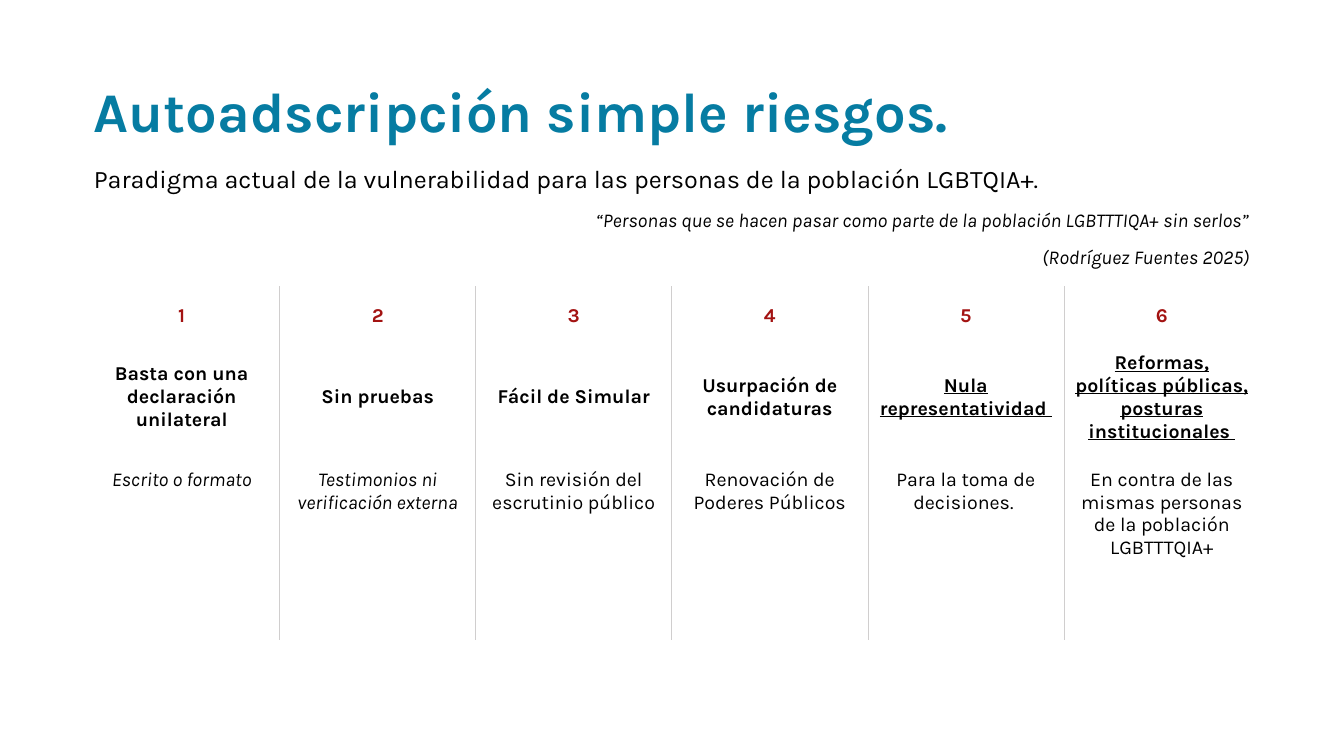
from lxml import etree
from pptx import Presentation
from pptx.dml.color import RGBColor
from pptx.enum.text import MSO_ANCHOR, MSO_AUTO_SIZE, PP_ALIGN
from pptx.oxml.ns import qn
from pptx.util import Cm, Pt

LEFT, CENTER, RIGHT = PP_ALIGN.LEFT, PP_ALIGN.CENTER, PP_ALIGN.RIGHT
TOP, MIDDLE = MSO_ANCHOR.TOP, MSO_ANCHOR.MIDDLE
NO_AUTOFIT = MSO_AUTO_SIZE.NONE

# Content
FONT = "Karla"
BLUE, RED, BLACK, GRAY = "067CA2", "A31312", "000000", "D0CECE"
TITLE = "Autoadscripción simple riesgos."
SUBTITLE = "Paradigma actual de la vulnerabilidad para las personas de la población LGBTQIA+."
QUOTE = [
    "“Personas que se hacen pasar como parte de la población LGBTTTIQA+ sin serlos”",
    "(Rodríguez Fuentes 2025)",
]
# Heading, heading underlined, detail, detail in italics
RISKS = [
    ("Basta con una declaración unilateral", False, "Escrito o formato", True),
    ("Sin pruebas", False, "Testimonios ni verificación externa", True),
    ("Fácil de Simular", False, "Sin revisión del escrutinio público", False),
    ("Usurpación de candidaturas", False, "Renovación de Poderes Públicos", False),
    ("Nula representatividad ", True, "Para la toma de decisiones. ", False),
    ("Reformas, políticas públicas, posturas institucionales ", True,
     "En contra de las mismas personas de la población LGBTTTQIA+", False),
]

# Layout
MARGIN = Cm(2.11)
CONTENT_WIDTH = Cm(29.64)
ROW_HEIGHTS = [Cm(1.52), Cm(1.52), Cm(4.83)]


def color(hex_code):
    return RGBColor.from_string(hex_code)


def write(paragraph, text, size=14, fill=BLACK, align=LEFT, before=0,
          bold=False, italic=False, underline=False):
    paragraph.alignment = align
    paragraph.space_before = Pt(before)
    run = paragraph.add_run()
    run.text = text
    font = run.font
    font.name, font.size, font.color.rgb = FONT, Pt(size), color(fill)
    font.bold, font.italic, font.underline = bold, italic, underline


def remove_bullet(paragraph):
    properties = paragraph._p.get_or_add_pPr()
    properties.set("marL", "0")
    properties.set("indent", "0")
    etree.SubElement(properties, qn("a:buNone"))


def set_borders(cell, sides):
    properties = cell._tc.get_or_add_tcPr()
    for position, side in enumerate(("L", "R", "T", "B")):
        line = etree.Element(qn(f"a:ln{side}"), w=str(Pt(0.5)))
        if side in sides:
            solid = etree.SubElement(line, qn("a:solidFill"))
            etree.SubElement(solid, qn("a:srgbClr"), val=GRAY)
        else:
            etree.SubElement(line, qn("a:noFill"))
        properties.insert(position, line)


def place(shape, left, top, width, height, anchor):
    shape.left, shape.top, shape.width, shape.height = left, top, width, height
    frame = shape.text_frame
    frame.word_wrap = True
    frame.auto_size = NO_AUTOFIT
    frame.vertical_anchor = anchor
    return frame


def add_risk_table(slide):
    shape = slide.shapes.add_table(len(ROW_HEIGHTS), len(RISKS), MARGIN, Cm(7.21),
                                   CONTENT_WIDTH, sum(ROW_HEIGHTS))
    table = shape.table
    table.first_row = table.horz_banding = False
    for row, height in zip(table.rows, ROW_HEIGHTS):
        row.height = height
    for column, (heading, underlined, detail, italic) in enumerate(RISKS):
        # Inner vertical rules only
        sides = ("L" if column > 0 else "") + ("R" if column < len(RISKS) - 1 else "")
        entries = [
            (str(column + 1), dict(fill=RED, bold=True)),
            (heading, dict(bold=True, underline=underlined)),
            (detail, dict(italic=italic)),
        ]
        for row, (text, style) in enumerate(entries):
            cell = table.cell(row, column)
            cell.fill.background()
            is_detail = row == 2
            cell.vertical_anchor = TOP if is_detail else MIDDLE
            if is_detail:
                cell.margin_top = Cm(0.51)
            set_borders(cell, sides)
            write(cell.text_frame.paragraphs[0], text, align=CENTER, **style)


def main():
    presentation = Presentation()
    presentation.slide_width, presentation.slide_height = Cm(33.87), Cm(19.05)
    slide = presentation.slides.add_slide(presentation.slide_layouts[1])

    # Title
    title = place(slide.shapes.title, MARGIN, Cm(1.98), Cm(29.41), Cm(1.8), MIDDLE)
    title.paragraphs[0].line_spacing = 0.9
    write(title.paragraphs[0], TITLE, size=40, fill=BLUE, bold=True)

    # Subtitle and quotation
    body = place(slide.placeholders[1], MARGIN, Cm(3.99), CONTENT_WIDTH, Cm(3.23), TOP)
    remove_bullet(body.paragraphs[0])
    write(body.paragraphs[0], SUBTITLE, size=18)
    for text in QUOTE:
        paragraph = body.add_paragraph()
        remove_bullet(paragraph)
        write(paragraph, text, align=RIGHT, before=10, italic=True)

    add_risk_table(slide)
    presentation.save("out.pptx")


if __name__ == "__main__":
    main()
